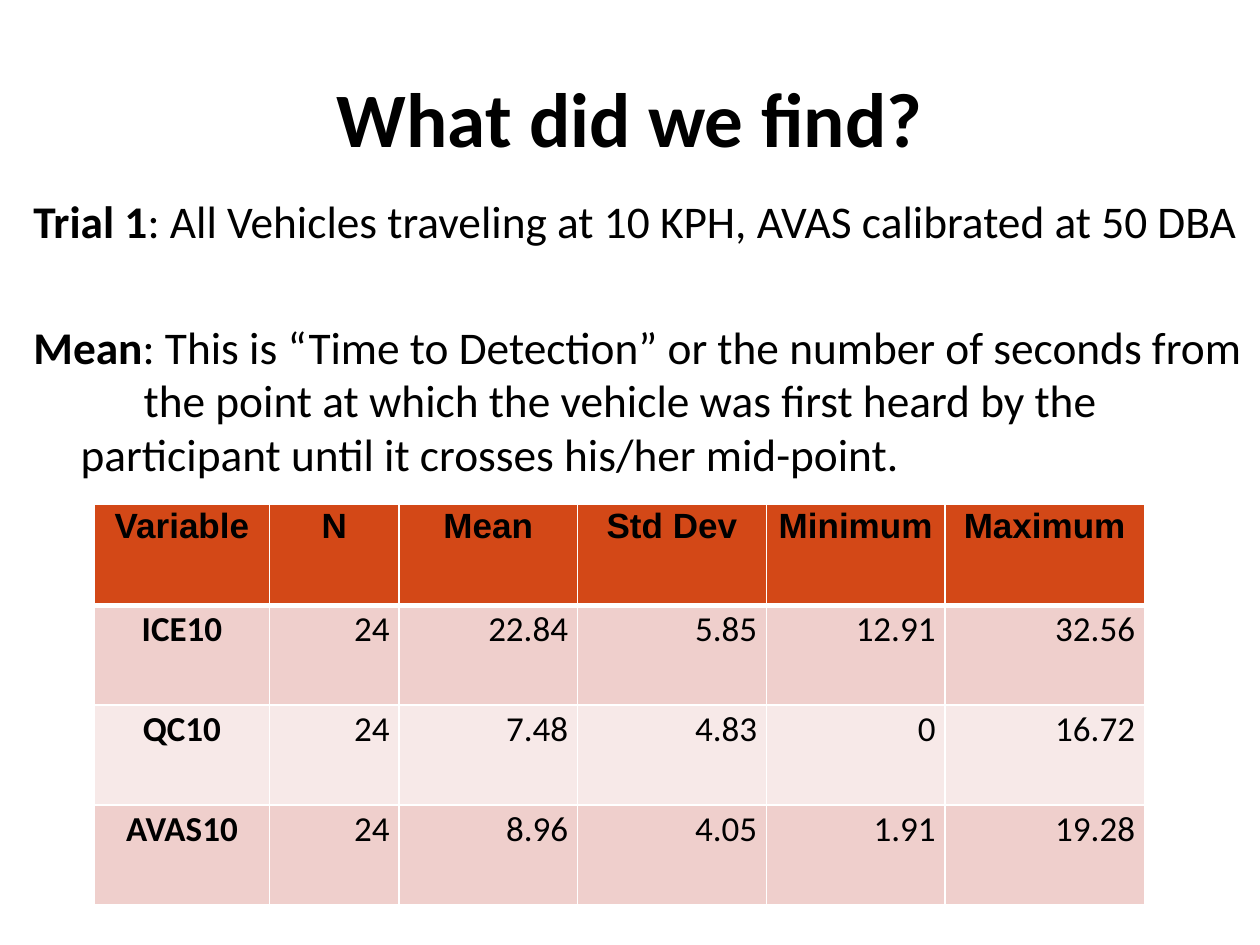
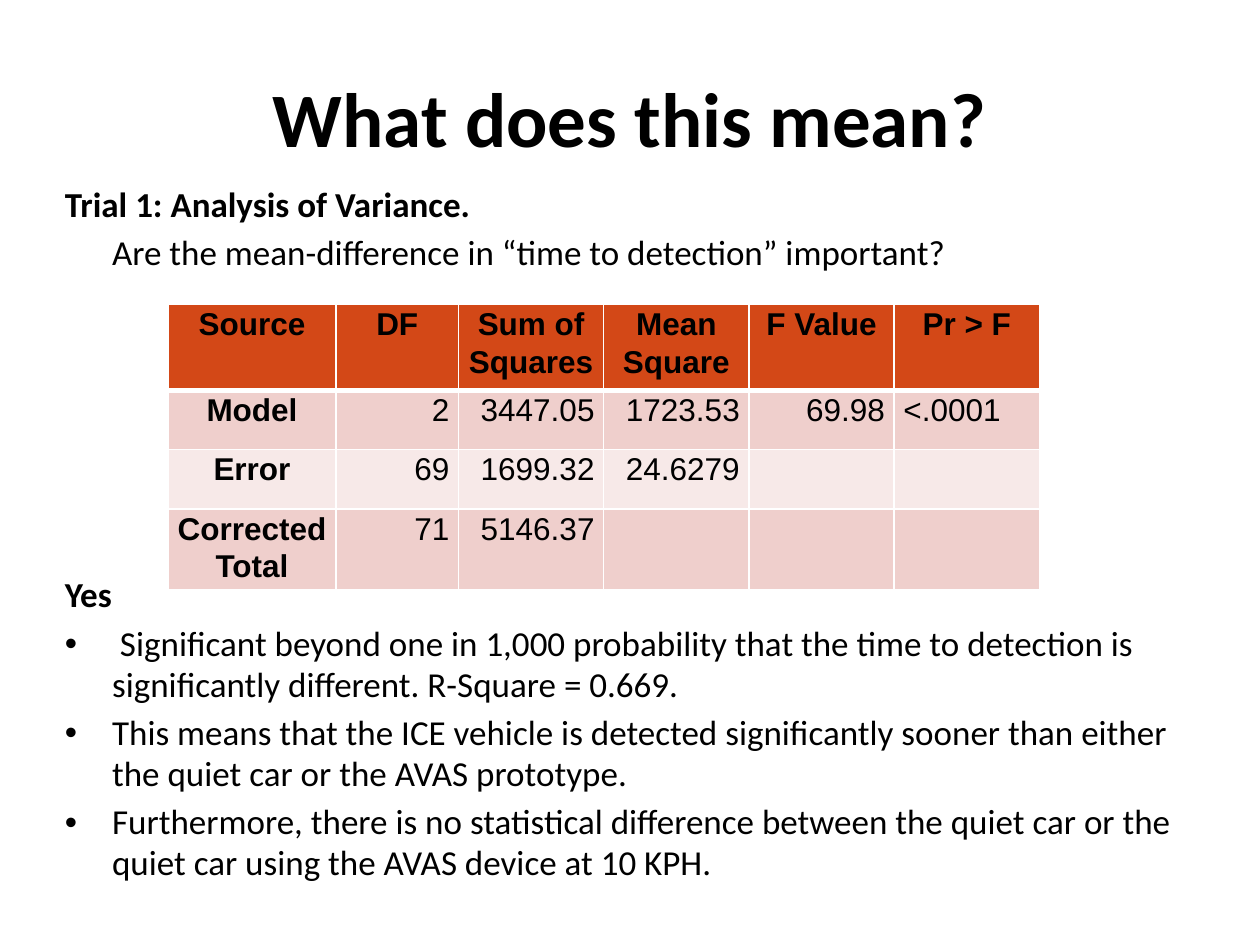
"""Build two slides on the detection-time results of Trial 1."""
from lxml import etree
from pptx import Presentation
from pptx.dml.color import RGBColor
from pptx.enum.text import MSO_ANCHOR, PP_ALIGN
from pptx.oxml.ns import qn
from pptx.util import Pt

LEFT, CENTER, RIGHT = PP_ALIGN.LEFT, PP_ALIGN.CENTER, PP_ALIGN.RIGHT
TOP, MIDDLE = MSO_ANCHOR.TOP, MSO_ANCHOR.MIDDLE
INK, WHITE = "000000", "FFFFFF"
HEADER_FILL, BAND_FILLS = "D34817", ("EFCFCC", "F7E9E8")
BODY_FONT, TABLE_FONT = "Calibri", "Arial"
HANGING = 27
BODY_SPACING, CELL_SPACING = 0.985, 1.07
CELL_INSET = 5.3

FINDINGS = (
    ("Variable", "N", "Mean", "Std Dev", "Minimum", "Maximum"),
    ("ICE10", "24", "22.84", "5.85", "12.91", "32.56"),
    ("QC10", "24", "7.48", "4.83", "0", "16.72"),
    ("AVAS10", "24", "8.96", "4.05", "1.91", "19.28"),
)
VARIANCE = (
    ("Source", "DF", "Sum of Squares", "Mean Square", "F Value", "Pr > F"),
    ("Model", "2", "3447.05", "1723.53", "69.98", "<.0001"),
    ("Error", "69", "1699.32", "24.6279", "", ""),
    ("Corrected Total", "71", "5146.37", "", "", ""),
)
CONCLUSIONS = (
    " Significant beyond one in 1,000 probability that the time to detection is "
    "significantly different. R-Square = 0.669.",
    "This means that the ICE vehicle is detected significantly sooner than either "
    "the quiet car or the AVAS prototype.",
    "Furthermore, there is no statistical difference between the quiet car or the "
    "quiet car using the AVAS device at 10 KPH.",
)


def color(hex_code):
    """Turn a hex string into a colour."""
    return RGBColor.from_string(hex_code)


def write(paragraph, text, size=20, font=BODY_FONT, bold=False, ink=INK):
    """Append formatted text to a paragraph."""
    run = paragraph.add_run()
    run.text = text
    run.font.size = Pt(size)
    run.font.name = font
    run.font.bold = bold
    run.font.color.rgb = color(ink)


def add_frame(slide, left, top, width, height, anchor=TOP):
    """Add a wrapping text box and return its text frame."""
    frame = slide.shapes.add_textbox(Pt(left), Pt(top), Pt(width), Pt(height)).text_frame
    frame.word_wrap = True
    frame.vertical_anchor = anchor
    return frame


def add_title(slide, text):
    """Add the centred slide title."""
    heading = add_frame(slide, 36, 21.6, 648, 90, MIDDLE).paragraphs[0]
    heading.alignment = CENTER
    write(heading, text, size=44, bold=True)


def add_body_paragraph(frame, lead="", rest="", size=20, before=0, hanging=HANGING, bullet=False):
    """Add an indented paragraph with a bold lead, plain rest and optional bullet."""
    first = frame.paragraphs[0]
    paragraph = frame.add_paragraph() if first.runs else first
    paragraph.line_spacing = BODY_SPACING
    paragraph.space_before = Pt(before)
    properties = paragraph._p.get_or_add_pPr()
    properties.set("marL", str(Pt(HANGING)))
    properties.set("indent", str(-Pt(hanging)))
    if bullet:
        etree.SubElement(properties, qn("a:buFont"), typeface=TABLE_FONT)
        etree.SubElement(properties, qn("a:buChar"), char="•")
    if lead:
        write(paragraph, lead, size=size, bold=True)
    if rest:
        write(paragraph, rest, size=size)


def style_cell(cell, fill, bottom_width):
    """Set the fill, insets and white borders of a table cell."""
    cell.margin_left = cell.margin_right = Pt(CELL_INSET)
    cell.margin_top = cell.margin_bottom = 0
    properties = cell._tc.get_or_add_tcPr()
    for side, width in (("L", 1), ("R", 1), ("T", 1), ("B", bottom_width)):
        border = etree.SubElement(properties, qn(f"a:ln{side}"), w=str(Pt(width)))
        line_fill = etree.SubElement(border, qn("a:solidFill"))
        etree.SubElement(line_fill, qn("a:srgbClr"), val=WHITE)
    cell.fill.solid()
    cell.fill.fore_color.rgb = color(fill)


def add_results(slide, rows, left, top, widths, heights, size, label_font):
    """Add a results table with a header row and a label column."""
    table = slide.shapes.add_table(
        len(rows), len(widths), Pt(left), Pt(top), Pt(sum(widths)), Pt(sum(heights))
    ).table
    for column, width in zip(table.columns, widths):
        column.width = Pt(width)
    for r, (values, height) in enumerate(zip(rows, heights)):
        table.rows[r].height = Pt(height)
        header = r == 0
        fill = HEADER_FILL if header else BAND_FILLS[(r - 1) % 2]
        for c, value in enumerate(values):
            cell = table.cell(r, c)
            style_cell(cell, fill, 3 if header else 1)
            if not value:
                continue
            label = header or c == 0
            entry = cell.text_frame.paragraphs[0]
            entry.line_spacing = CELL_SPACING
            entry.alignment = CENTER if label else LEFT if value.startswith("<") else RIGHT
            write(entry, value, size=size, font=TABLE_FONT if header else label_font, bold=label)


def build_findings(slide):
    """Fill the slide that reports time to detection."""
    add_title(slide, "What did we find?")
    body = add_frame(slide, 12, 108.5, 708, 186)
    add_body_paragraph(
        body, "Trial 1", ": All Vehicles traveling at 10 KPH, AVAS calibrated at 50 DBA", size=25.9
    )
    add_body_paragraph(
        body, "Mean",
        ": This is “Time to Detection” or the number of seconds from \tthe point at which "
        "the vehicle was first heard by the \tparticipant until it crosses his/her mid-point.",
        size=25.9, before=41.5,
    )
    add_results(slide, FINDINGS, 54, 288, (100, 74, 102, 108, 102, 114),
                (58, 57, 57, 57), 20, BODY_FONT)


def build_variance(slide):
    """Fill the slide that explains the analysis of variance."""
    add_title(slide, "What does this mean?")
    body = add_frame(slide, 30, 102, 648, 84)
    add_body_paragraph(body, "Trial 1: Analysis of Variance.")
    add_body_paragraph(body, rest="Are the mean-difference in “time to detection” important?",
                       before=4, hanging=0)
    add_body_paragraph(body, "Yes", before=172)
    for conclusion in CONCLUSIONS:
        add_body_paragraph(body, rest=conclusion, before=4, bullet=True)
    add_results(slide, VARIANCE, 96, 174, (96, 70, 83, 83, 83, 83),
                (49, 34, 34, 43), 18, TABLE_FONT)


def main():
    """Build and save the presentation."""
    deck = Presentation()
    deck.slide_width, deck.slide_height = Pt(720), Pt(540)
    blank = deck.slide_layouts[6]
    for build in (build_findings, build_variance):
        build(deck.slides.add_slide(blank))
    deck.save("out.pptx")


if __name__ == "__main__":
    main()
